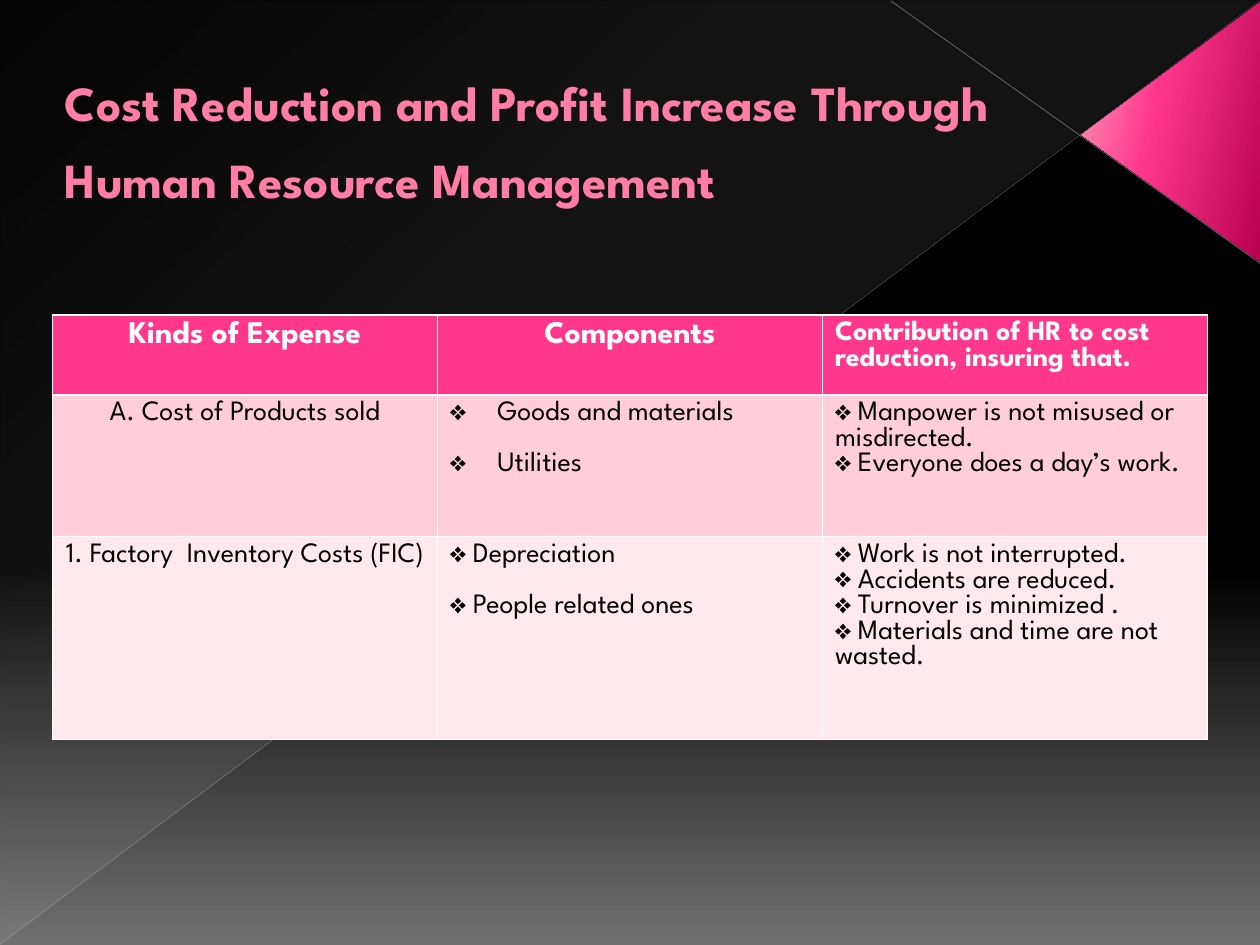
from dataclasses import dataclass

from lxml.etree import SubElement
from pptx import Presentation
from pptx.dml.color import RGBColor
from pptx.enum.shapes import MSO_CONNECTOR, MSO_SHAPE
from pptx.enum.text import MSO_ANCHOR, PP_ALIGN
from pptx.oxml import parse_xml
from pptx.oxml.ns import nsdecls, qn
from pptx.util import Pt


@dataclass(frozen=True)
class Theme:
    font: str = "League Spartan"
    title: str = "FF7DA7"
    edge: str = "B12761"
    white: str = "FFFFFF"
    black: str = "000000"
    head: str = "FF388C"
    bands: tuple = ("FFCEDA", "FFE8EE")
    back: tuple = ((0, "000000", 100), (60, "000000", 100), (100, "707070", 100))
    veil: tuple = ((0, "D2D2D2", 10), (70, "D2D2D2", 8), (100, "D2D2D2", 1))
    wedge: tuple = ((0, "B8014E", 100), (60, "FF388C", 100), (100, "FF9CB9", 100))
    big: int = 28
    mid: int = 18
    small: int = 16


THEME = Theme()
GAP = Pt(14.6)
HEADS = [
    ("Kinds of Expense", THEME.mid, PP_ALIGN.CENTER),
    ("Components", THEME.mid, PP_ALIGN.CENTER),
    ("Contribution of HR to cost reduction, insuring that.", THEME.small, PP_ALIGN.LEFT),
]
ROWS = [
    ("A. Cost of Products sold", ["Goods and materials", "Utilities"], 27,
     [" Manpower is not misused or misdirected.", " Everyone does a day’s work."]),
    ("1. Factory  Inventory Costs (FIC)", [" Depreciation", " People related ones"], 0,
     [" Work is not interrupted.", " Accidents are reduced.",
      " Turnover is minimized .", " Materials and time are not wasted."]),
]


def apply(item, values):
    for name, value in values.items():
        setattr(item, name, value)


def shade(host, root, stops, angle):
    host.fill.gradient()
    marks = "".join(
        f'<a:gs pos="{place * 1000}"><a:srgbClr val="{color}">'
        f'<a:alpha val="{alpha * 1000}"/></a:srgbClr></a:gs>'
        for place, color, alpha in stops)
    fresh = parse_xml(
        f'<a:gradFill {nsdecls("a")} rotWithShape="1"><a:gsLst>{marks}</a:gsLst>'
        f'<a:lin ang="{angle * 60000}" scaled="0"/></a:gradFill>')
    old = root.find(".//" + qn("a:gradFill"))
    old.getparent().replace(old, fresh)


def add_panel(slide, kind, box, stops, angle, turn=0):
    shape = slide.shapes.add_shape(kind, *map(Pt, box))
    shape.shadow.inherit = False
    shape.line.fill.background()
    shade(shape, shape._element.spPr, stops, angle)
    shape._element.spPr.xfrm.set("flipV", "1")
    shape.rotation = turn
    return shape


def add_line(slide, ends, color, width, alpha):
    line = slide.shapes.add_connector(MSO_CONNECTOR.STRAIGHT, *map(Pt, ends))
    line.line.color.rgb = RGBColor.from_string(color)
    line.line.width = Pt(width)
    props = line._element.spPr
    SubElement(props.find(".//" + qn("a:srgbClr")), qn("a:alpha"), val=str(alpha * 1000))
    SubElement(props, qn("a:effectLst"))


def write(par, text, size, color, bold=False, **form):
    run = par.add_run()
    run.text = text
    apply(run.font, {"name": THEME.font, "size": Pt(size), "bold": bold})
    run.font.color.rgb = RGBColor.from_string(color)
    apply(par, form)
    return run


def add_title(slide, text):
    frame = slide.shapes.add_textbox(*map(Pt, (30, 21.6, 570, 107.3))).text_frame
    apply(frame, {"word_wrap": True, "vertical_anchor": MSO_ANCHOR.MIDDLE})
    run = write(frame.paragraphs[0], text, THEME.big, THEME.title, True, line_spacing=1.3)
    run._r.get_or_add_rPr().insert(0, parse_xml(
        f'<a:ln {nsdecls("a")} w="{Pt(0.5)}"><a:solidFill>'
        f'<a:srgbClr val="{THEME.edge}"/></a:solidFill></a:ln>'))


def paint(cell, color):
    cell.fill.solid()
    cell.fill.fore_color.rgb = RGBColor.from_string(color)
    props = cell._tc.get_or_add_tcPr()
    for spot, side in enumerate(("lnL", "lnR", "lnT", "lnB")):
        props.insert(spot, parse_xml(
            f'<a:{side} {nsdecls("a")} w="{Pt(1)}"><a:solidFill>'
            f'<a:srgbClr val="{THEME.white}"/></a:solidFill></a:{side}>'))


def add_list(cell, items, indent=0, gap=0):
    frame = cell.text_frame
    for index, text in enumerate(items):
        par = frame.add_paragraph() if index else frame.paragraphs[0]
        write(par, text, THEME.small, THEME.black, space_before=gap if index else 0)
        props = par._p.get_or_add_pPr()
        props.set("marL", str(Pt(indent)))
        props.set("indent", str(-Pt(indent)))
        SubElement(props, qn("a:buChar"), char="❖")


def add_grid(slide):
    grid = slide.shapes.add_table(3, 3, *map(Pt, (30, 180, 660, 239))).table
    for row, height in zip(grid.rows, (42, 81, 116)):
        row.height = Pt(height)
    for row, color in enumerate((THEME.head, *THEME.bands)):
        for col in range(3):
            paint(grid.cell(row, col), color)
    for col, (text, size, align) in enumerate(HEADS):
        par = grid.cell(0, col).text_frame.paragraphs[0]
        write(par, text, size, THEME.white, True, alignment=align)
    for row, (kind, parts, indent, gains) in enumerate(ROWS, 1):
        par = grid.cell(row, 0).text_frame.paragraphs[0]
        write(par, kind, THEME.small, THEME.black, alignment=PP_ALIGN.CENTER)
        add_list(grid.cell(row, 1), parts, indent, GAP)
        add_list(grid.cell(row, 2), gains)


def main():
    deck = Presentation()
    apply(deck, {"slide_width": Pt(720), "slide_height": Pt(540)})
    slide = deck.slides.add_slide(deck.slide_layouts[6])
    shade(slide.background, slide._element, THEME.back, 90)
    add_panel(slide, MSO_SHAPE.RIGHT_TRIANGLE, (0.5, 0.5, 719, 539), THEME.veil, 133)
    wedge = add_panel(slide, MSO_SHAPE.ISOSCELES_TRIANGLE, (594.7, 24.5, 149, 102.2),
                      THEME.wedge, 258, 90)
    wedge.adjustments[0] = 0.51
    add_line(slide, (720, 150.5, 509, 0.5), "C6C6C6", 0.47, 45)
    add_line(slide, (0, 539.5, 719.5, 0.5), "BFBFBF", 0.39, 35)
    add_title(slide, "Cost Reduction and Profit Increase Through Human Resource Management")
    add_grid(slide)
    deck.save("out.pptx")


if __name__ == "__main__":
    main()
